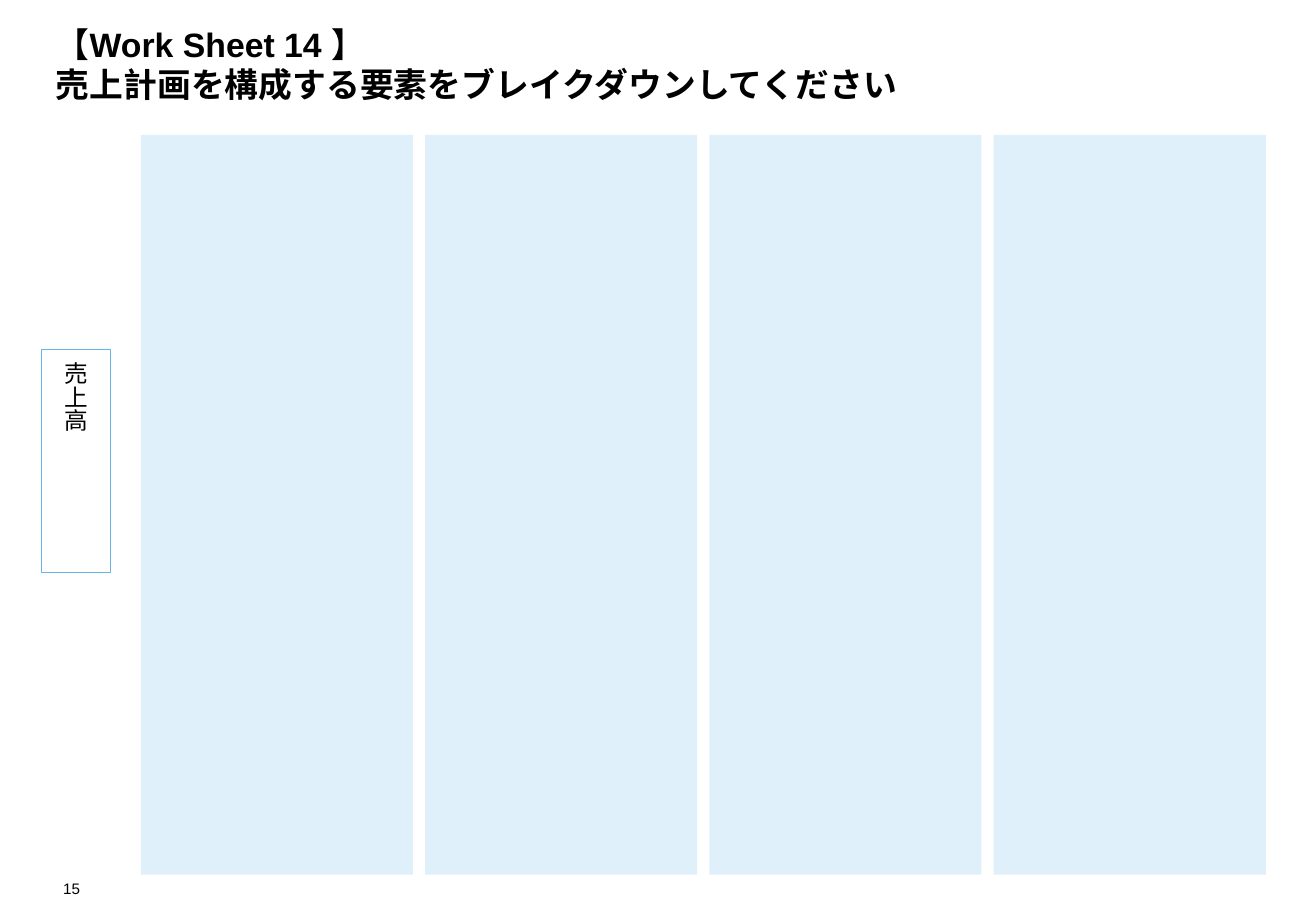
from copy import deepcopy
from dataclasses import dataclass

from pptx import Presentation
from pptx.dml.color import RGBColor
from pptx.enum.shapes import MSO_SHAPE
from pptx.enum.text import MSO_ANCHOR, MSO_AUTO_SIZE, PP_ALIGN
from pptx.oxml.ns import qn
from pptx.util import Pt

RECT = MSO_SHAPE.RECTANGLE
LEFT, CENTER, RIGHT = PP_ALIGN.LEFT, PP_ALIGN.CENTER, PP_ALIGN.RIGHT
MIDDLE, BOTTOM = MSO_ANCHOR.MIDDLE, MSO_ANCHOR.BOTTOM
NO_FIT = MSO_AUTO_SIZE.NONE

TITLE = "【Work Sheet 14 】\v売上計画を構成する要素をブレイクダウンしてください"
LABEL = "売上高"
PAGE = "15"
COLS = 4


@dataclass
class Theme:
    font: str = "Arial"
    ink: str = "000000"
    paper: str = "FFFFFF"
    edge: str = "62B5E5"
    panel: str = "E0F0FA"
    head: int = 20
    body: int = 14
    small: int = 9


theme = Theme()


def color(code):
    return RGBColor.from_string(code)


def place(*box):
    return [Pt(n) for n in box]


def write(shape, text, size, bold=False, align=LEFT, anchor=BOTTOM, wrap=False, inset=0):
    frame = shape.text_frame
    frame.auto_size = NO_FIT
    frame.word_wrap = wrap
    frame.vertical_anchor = anchor
    frame.margin_left = frame.margin_right = Pt(2 * inset)
    frame.margin_top = frame.margin_bottom = Pt(inset)
    para = frame.paragraphs[0]
    para.text = text
    para.alignment = align
    for run in para.runs:
        font = run.font
        font.name, font.size, font.bold = theme.font, Pt(size), bold
        font.color.rgb = color(theme.ink)
    for line in para._p.findall(qn("a:br")):
        line.append(deepcopy(para.runs[0]._r.rPr))


def block(slide, box, fill, edge=None):
    shape = slide.shapes.add_shape(RECT, *place(*box))
    shape.shadow.inherit = False
    shape.fill.solid()
    shape.fill.fore_color.rgb = color(fill)
    if edge:
        shape.line.color.rgb = color(edge)
        shape.line.width = Pt(0.75)
    else:
        shape.line.fill.background()
    return shape


def main():
    deck = Presentation()
    deck.slide_width, deck.slide_height = place(780, 540)
    slide = deck.slides.add_slide(deck.slide_layouts[5])

    title = slide.shapes.title
    title.left, title.top, title.width, title.height = place(33.1, 10.8, 714.2, 51.1)
    write(title, TITLE, theme.head, bold=True, wrap=True)

    page = slide.shapes.add_textbox(*place(33.1, 518.4, 14.4, 13.7))
    write(page, PAGE, theme.small, align=RIGHT)

    label = block(slide, (24.5, 207.4, 41, 131.8), theme.paper, theme.edge)
    write(label, LABEL, theme.body, align=CENTER, anchor=MIDDLE, inset=3.6)
    label.text_frame._txBody.bodyPr.set("vert", "eaVert")

    left, top, width, height, pitch = 83.5, 79.9, 161.3, 438.5, 168.5
    for col in range(COLS):
        block(slide, (left + col * pitch, top, width, height), theme.panel)

    deck.save("out.pptx")


if __name__ == "__main__":
    main()
